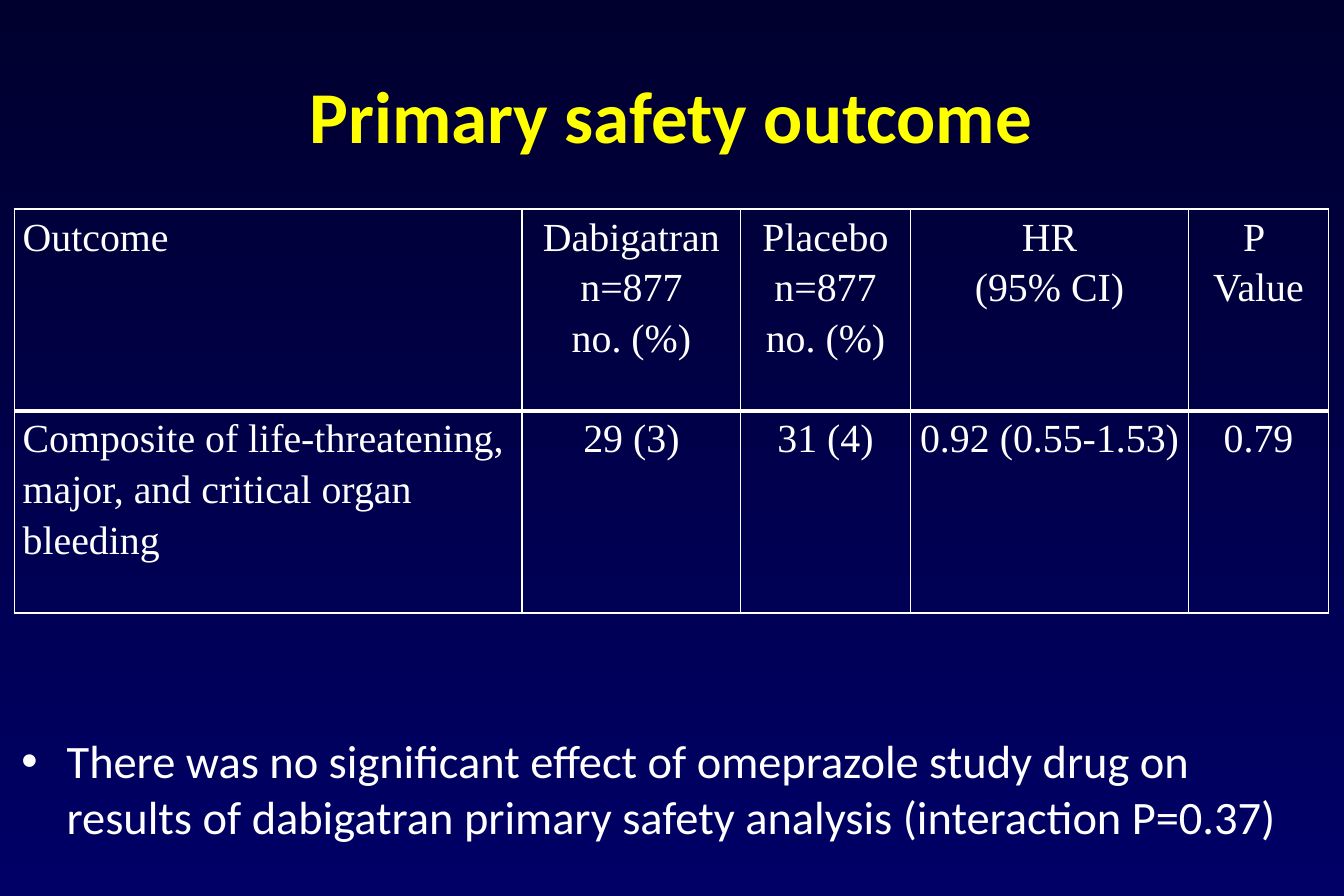
from lxml.etree import SubElement
from pptx import Presentation
from pptx.dml.color import RGBColor
from pptx.enum.text import MSO_ANCHOR as Anchor, PP_ALIGN as Align
from pptx.oxml.ns import qn
from pptx.util import Inches, Pt

COLORS = {"top": "00002F", "bottom": "000066", "title": "FFFF00", "text": "FFFFFF"}
COLUMN_WIDTHS = [4.25, 1.83, 1.42, 2.33, 1.17]
ROW_HEIGHT = 1.69
OUTCOMES = [
    ["Outcome", "Dabigatran\nn=877\nno. (%)", "Placebo\nn=877\nno. (%)",
     "HR\n(95% CI)", "P \nValue"],
    ["Composite of life-threatening, major, and critical organ bleeding",
     "29 (3)", "31 (4)", "0.92 (0.55-1.53)", "0.79"],
]


def rgb(name):
    """Return the named colour."""
    return RGBColor.from_string(COLORS[name])


def write(frame, text, *, size, font="Calibri", color="text", bold=False,
          align=Align.LEFT, spacing=None, before=None):
    """Fill a text frame with one formatted paragraph per line of text."""
    frame.word_wrap = True
    frame.text = text
    for paragraph in frame.paragraphs:
        paragraph.alignment = align
        paragraph.line_spacing = spacing
        paragraph.space_before = before
        for run in paragraph.runs:
            run.font.name = font
            run.font.size = Pt(size)
            run.font.bold = bold
            run.font.color.rgb = rgb(color)


def paint_background(slide):
    """Give the slide a vertical gradient."""
    fill = slide.background.fill
    fill.gradient()
    fill.gradient_angle = 270
    for stop, name in zip(fill.gradient_stops, ("top", "bottom")):
        stop.color.rgb = rgb(name)


def add_title(slide, text):
    """Place and fill the title placeholder."""
    title = slide.shapes.title
    title.left, title.top = Inches(0.84), Inches(0.33)
    title.width, title.height = Inches(9.56), Inches(1.25)
    title.text_frame.vertical_anchor = Anchor.MIDDLE
    write(title.text_frame, text, size=44, color="title", bold=True,
          align=Align.CENTER)


def draw_borders(cell, **widths):
    """Draw cell borders with the given widths in points."""
    properties = cell._tc.get_or_add_tcPr()
    for side, width in widths.items():
        line = SubElement(properties, qn(f"a:ln{side}"), w=str(Pt(width)))
        fill = SubElement(line, qn("a:solidFill"))
        SubElement(fill, qn("a:srgbClr"), val=COLORS["text"])


def add_outcome_table(slide):
    """Add the table of outcomes with a heavy rule under its header."""
    table = slide.shapes.add_table(
        len(OUTCOMES), len(COLUMN_WIDTHS), Inches(0.12), Inches(1.75),
        Inches(sum(COLUMN_WIDTHS)), Inches(ROW_HEIGHT * len(OUTCOMES))).table
    table.first_row = table.horz_banding = False
    for column, width in zip(table.columns, COLUMN_WIDTHS):
        column.width = Inches(width)
    for r, outcome in enumerate(OUTCOMES):
        table.rows[r].height = Inches(ROW_HEIGHT)
        for c, value in enumerate(outcome):
            cell = table.cell(r, c)
            cell.margin_left = cell.margin_right = Inches(0.07)
            cell.margin_top = cell.margin_bottom = 0
            draw_borders(cell, L=1, R=1, T=3 if r else 1, B=1 if r else 3)
            cell.fill.background()
            write(cell.text_frame, value, size=24, font="Times New Roman",
                  align=Align.CENTER if c else Align.LEFT, spacing=1.15)


def add_bullet(slide, text):
    """Add a bulleted remark with a hanging indent."""
    remark = slide.shapes.add_textbox(
        Inches(0.08), Inches(6.08), Inches(11.08), Inches(1.03)).text_frame
    write(remark, text, size=28, before=Pt(5.6))
    properties = remark.paragraphs[0]._p.get_or_add_pPr()
    properties.set("marL", str(Inches(0.38)))
    properties.set("indent", str(Inches(-0.38)))
    SubElement(properties, qn("a:buFont"), typeface="Arial")
    SubElement(properties, qn("a:buChar"), char="•")


def main():
    """Build and save the slide."""
    deck = Presentation()
    deck.slide_width, deck.slide_height = Inches(11.25), Inches(7.5)
    slide = deck.slides.add_slide(deck.slide_layouts[5])
    paint_background(slide)
    add_title(slide, "Primary safety outcome")
    add_outcome_table(slide)
    add_bullet(slide, "There was no significant effect of omeprazole study drug on "
                      "results of dabigatran primary safety analysis "
                      "(interaction P=0.37)")
    deck.save("out.pptx")


if __name__ == "__main__":
    main()
